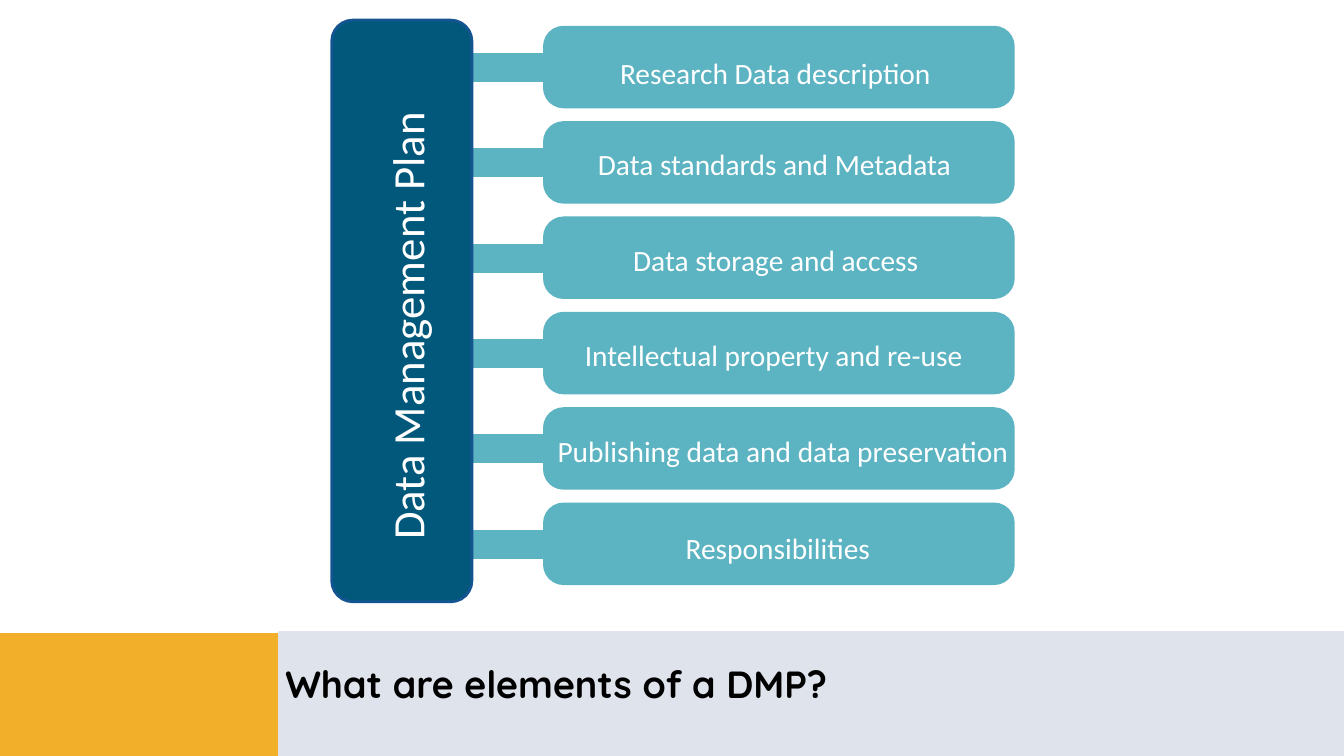
import pptx
import pptx.util
import pptx.dml.color
import pptx.enum.shapes
import pptx.enum.text

Inches = pptx.util.Inches
Pt = pptx.util.Pt
RGB = pptx.dml.color.RGBColor.from_string
SHAPE = pptx.enum.shapes.MSO_SHAPE
COLORS = {
    "yellow": "F2AF29",
    "teal": "5CB3C1",
    "navy": "01587A",
    "outline": "145591",
    "band": "DFE3EB",
    "white": "FFFFFF",
    "black": "000000",
}

prs = pptx.Presentation()
prs.slide_width = Inches(13.33)
prs.slide_height = Inches(7.5)
slide = prs.slides.add_slide(prs.slide_layouts[6])


def add_box(kind, left, top, width, height, fill, line=None, radius=None):
    sp = slide.shapes.add_shape(
        kind, Inches(left), Inches(top), Inches(width), Inches(height))
    sp.shadow.inherit = False
    sp.fill.solid()
    sp.fill.fore_color.rgb = RGB(COLORS[fill])
    if line:
        sp.line.color.rgb = RGB(COLORS[line])
        sp.line.width = Pt(2)
    else:
        sp.line.fill.background()
    if radius:
        sp.adjustments[0] = radius


def add_text(text, left, top, width, height, size=21, font="Calibri",
             color="white", bold=False, wrap=True, grow=True, spacing=None,
             rotation=0):
    sp = slide.shapes.add_textbox(
        Inches(left), Inches(top), Inches(width), Inches(height))
    sp.rotation = rotation
    tf = sp.text_frame
    tf.word_wrap = wrap
    if grow:
        tf.auto_size = pptx.enum.text.MSO_AUTO_SIZE.SHAPE_TO_FIT_TEXT
    tf.margin_left = tf.margin_right = Inches(0.05)
    tf.margin_top = tf.margin_bottom = Inches(0.05)
    p = tf.paragraphs[0]
    if spacing:
        p.line_spacing = spacing
    r = p.add_run()
    r.text = text
    r.font.size = Pt(size)
    r.font.name = font
    r.font.bold = bold
    r.font.color.rgb = RGB(COLORS[color])


add_box(SHAPE.RECTANGLE, 0, 6.28, 2.78, 1.22, "yellow")
add_box(SHAPE.RECTANGLE, 2.77, 6.27, 10.56, 1.23, "band", "band")
add_text("What are elements of a DMP?", 2.78, 6.28, 9.8, 1.22, size=27,
         font="Quicksand", color="black", bold=True, grow=False, spacing=1.5)

elements = [
    ("Research Data description", 6.1, 0.5, 3.2),
    ("Data standards and Metadata", 5.88, 1.4, 3.61),
    ("Data storage and access", 6.23, 2.35, 2.94),
    ("Intellectual property and re-use", 5.75, 3.3, 3.86),
    ("Publishing data and data preservation", 5.48, 4.25, 4.58),
    ("Responsibilities", 6.75, 5.21, 1.95),
]
row_pitch = 0.946
for row, (label, left, top, width) in enumerate(elements):
    row_top = 0.27 + row * row_pitch
    add_box(SHAPE.RECTANGLE, 4.56, row_top + 0.27, 1.27, 0.26, "teal", "teal")
    add_box(SHAPE.ROUNDED_RECTANGLE, 5.4, row_top, 4.65, 0.79,
            "teal", "teal", radius=0.24)
    add_text(label, left, top, width, 0.4, wrap=False)

add_box(SHAPE.ROUNDED_RECTANGLE, 3.29, 0.2, 1.39, 5.77,
        "navy", "outline", radius=0.15)
add_text("Data Management Plan", 1.66, 2.81, 4.65, 0.54, size=32, rotation=270)

prs.save("out.pptx")
